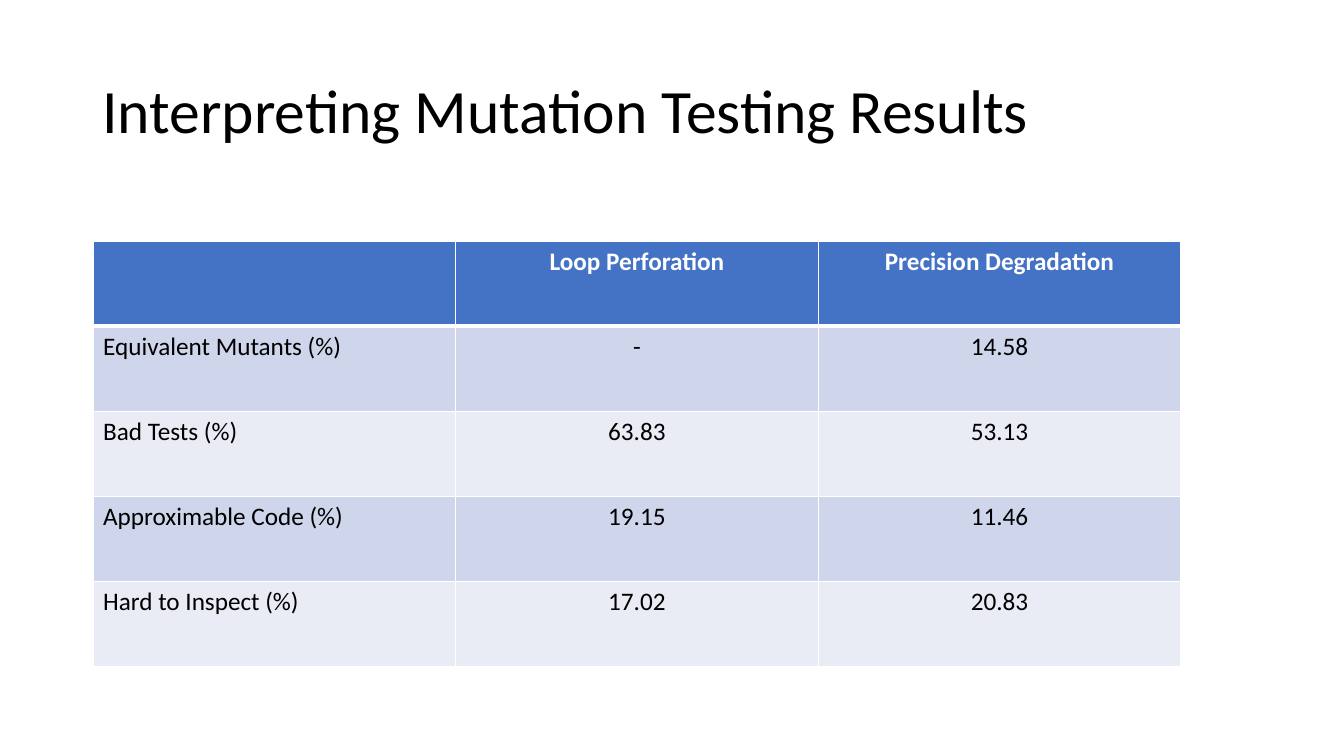
"""Build a slide with a table of mutation testing results."""
from lxml.etree import SubElement
from pptx import Presentation
from pptx.dml.color import RGBColor
from pptx.enum.text import MSO_ANCHOR as Anchor, MSO_AUTO_SIZE as AutoSize, PP_ALIGN as Align
from pptx.oxml.ns import qn
from pptx.util import Pt

COLORS = {
    "text": "000000",
    "white": "FFFFFF",
    "header": "4472C4",
    "band_dark": "CFD5EA",
    "band_light": "E9EBF5",
}
FONT = "Calibri"
TITLE_ONLY = 5
RESULTS = [
    ["", "Loop Perforation", "Precision Degradation"],
    ["Equivalent Mutants (%)", "-", "14.58"],
    ["Bad Tests (%)", "63.83", "53.13"],
    ["Approximable Code (%)", "19.15", "11.46"],
    ["Hard to Inspect (%)", "17.02", "20.83"],
]


def color(name):
    return RGBColor.from_string(COLORS[name])


def style_paragraph(paragraph, size, color_name, align=Align.LEFT, bold=False):
    paragraph.alignment = align
    font = paragraph.font
    font.name, font.size, font.bold = FONT, Pt(size), bold
    font.color.rgb = color(color_name)


def add_title(slide, text):
    title = slide.shapes.title
    title.left, title.top = Pt(66), Pt(28.75)
    title.width, title.height = Pt(828), Pt(104.4)
    frame = title.text_frame
    frame.text = text
    frame.word_wrap = True
    frame.auto_size = AutoSize.NONE
    frame.vertical_anchor = Anchor.MIDDLE
    paragraph = frame.paragraphs[0]
    paragraph.line_spacing = 0.9
    style_paragraph(paragraph, 44, "text")


def set_borders(cell, top, bottom):
    properties = cell._tc.get_or_add_tcPr()
    for tag, width in (("a:lnL", 1), ("a:lnR", 1), ("a:lnT", top), ("a:lnB", bottom)):
        line = SubElement(properties, qn(tag), w=str(Pt(width)))
        fill = SubElement(line, qn("a:solidFill"))
        SubElement(fill, qn("a:srgbClr"), val=COLORS["white"])


def format_cell(cell, text, row, column):
    is_header = row == 0
    set_borders(cell, top=3 if row == 1 else 1, bottom=3 if is_header else 1)
    band = "band_dark" if row % 2 else "band_light"
    cell.fill.solid()
    cell.fill.fore_color.rgb = color("header" if is_header else band)
    cell.text = text
    style_paragraph(
        cell.text_frame.paragraphs[0],
        18,
        "white" if is_header else "text",
        Align.CENTER if column else Align.LEFT,
        is_header,
    )


def add_results_table(slide, results):
    frame = slide.shapes.add_table(
        len(results), len(results[0]), Pt(66.5), Pt(172.2), Pt(777), Pt(304)
    )
    table = frame.table
    for row, values in enumerate(results):
        for column, text in enumerate(values):
            format_cell(table.cell(row, column), text, row, column)


def main():
    presentation = Presentation()
    presentation.slide_width, presentation.slide_height = Pt(960), Pt(540)
    slide = presentation.slides.add_slide(presentation.slide_layouts[TITLE_ONLY])
    add_title(slide, "Interpreting Mutation Testing Results")
    add_results_table(slide, RESULTS)
    presentation.save("out.pptx")


if __name__ == "__main__":
    main()
